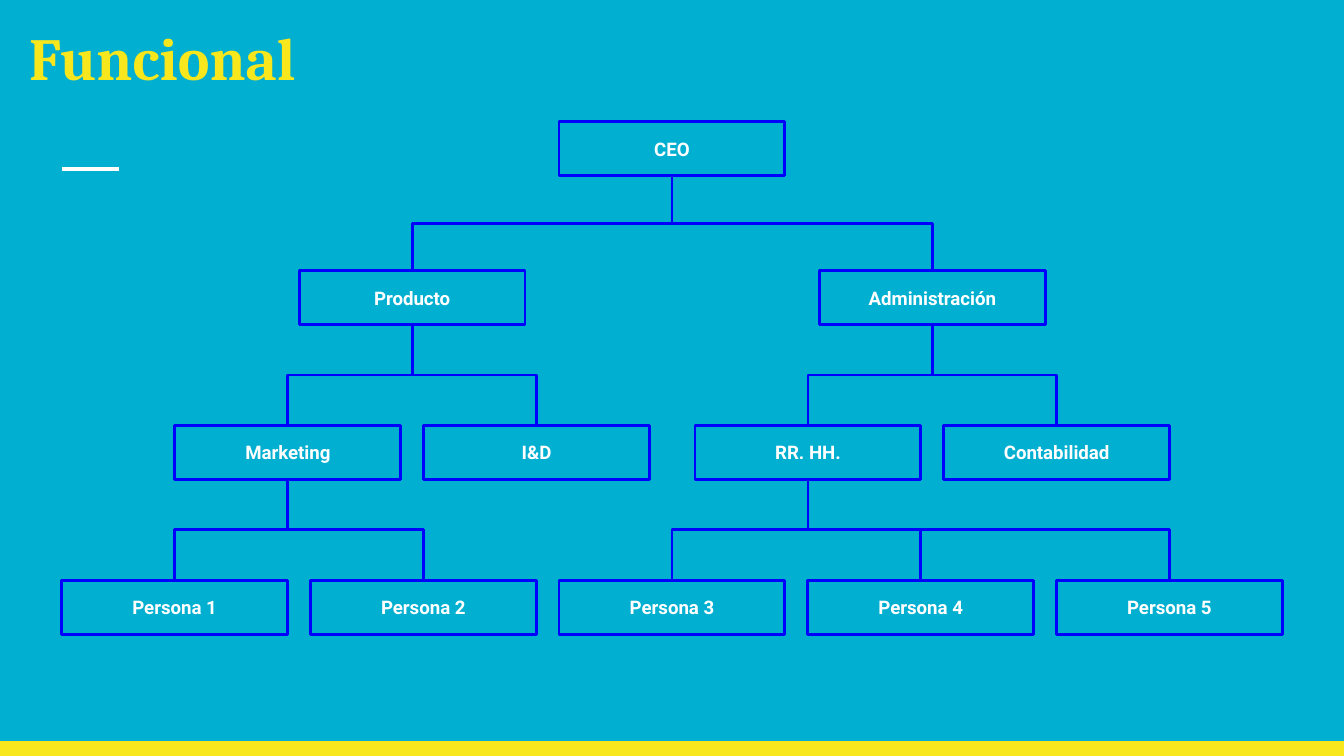
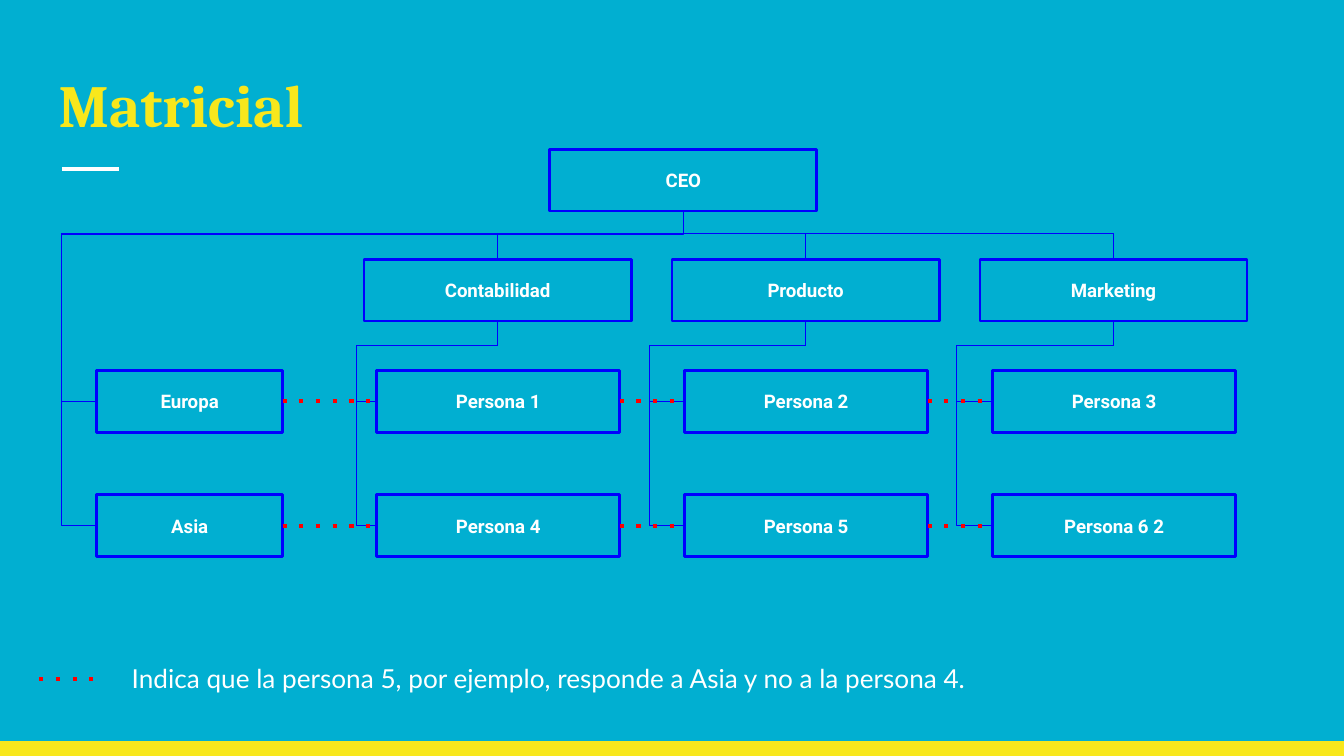
import pptx
import pptx.util
import pptx.dml.color
import pptx.enum.dml
import pptx.enum.shapes
import pptx.enum.text
import pptx.oxml.ns

Cm = pptx.util.Cm
Pt = pptx.util.Pt
Align = pptx.enum.text.PP_ALIGN
Anchor = pptx.enum.text.MSO_ANCHOR
Kind = pptx.enum.shapes.MSO_CONNECTOR
Rect = pptx.enum.shapes.MSO_SHAPE.RECTANGLE
qn = pptx.oxml.ns.qn

HUES = {
    "back": "01AFD1",
    "sun": "F8E71C",
    "blue": "0000FF",
    "red": "FF0000",
    "white": "FFFFFF",
}
TOP, LEFT, BOTTOM, RIGHT = range(4)


def hue(name):
    return pptx.dml.color.RGBColor.from_string(HUES[name])


def write(frame, text, font="Roboto", size=10, color="white", bold=False,
          align=Align.LEFT, anchor=Anchor.TOP):
    frame.word_wrap = True
    frame.auto_size = pptx.enum.text.MSO_AUTO_SIZE.NONE
    frame.vertical_anchor = anchor
    frame.margin_left = frame.margin_right = Cm(0.25)
    frame.margin_top = frame.margin_bottom = Cm(0.25)
    para = frame.paragraphs[0]
    para.alignment = align
    run = para.add_run()
    run.text = text
    run.font.name = font
    run.font.size = Pt(size)
    run.font.bold = bold
    run.font.color.rgb = hue(color)


class Deck:
    def __init__(self):
        self.prs = pptx.Presentation()
        self.prs.slide_width = Cm(25.4)
        self.prs.slide_height = Cm(14.29)
        self.slide = None
        fill = self.prs.slide_master.background.fill
        fill.solid()
        fill.fore_color.rgb = hue("back")

    def page(self, title, x, y, high):
        first = self.slide is None
        self.slide = self.prs.slides.add_slide(self.prs.slide_layouts[5])
        if first:
            self.brand()
        head = self.slide.shapes.title
        head.left, head.top = Cm(x), Cm(y)
        head.width, head.height = Cm(23.67), Cm(high)
        write(head.text_frame, title, font="Cambria", size=32, color="sun", bold=True)

    def brand(self):
        band = self.rect(0, 14.01, 25.4, 0.28)
        band.fill.solid()
        band.fill.fore_color.rgb = hue("sun")
        band.line.fill.background()
        rule = self.rule(1.17, 2.24, 3.2, "white")
        for item in (band, rule):
            self.prs.slide_master.shapes.element.append(item.element)

    def rect(self, x, y, wide, high):
        shape = self.slide.shapes.add_shape(Rect, Cm(x), Cm(y), Cm(wide), Cm(high))
        shape.shadow.inherit = False
        return shape

    def box(self, text, x, y, wide, high):
        shape = self.rect(x, y, wide, high)
        shape.fill.background()
        shape.line.color.rgb = hue("blue")
        shape.line.width = Pt(1.5)
        write(shape.text_frame, text, bold=True, align=Align.CENTER, anchor=Anchor.MIDDLE)
        return shape

    def note(self, text, x, y, wide, high):
        shape = self.slide.shapes.add_textbox(Cm(x), Cm(y), Cm(wide), Cm(high))
        write(shape.text_frame, text, font="Lato", size=14)

    def line(self, kind, color, width, ends=(0, 0, 0, 0)):
        link = self.slide.shapes.add_connector(kind, *map(Cm, ends))
        link.line.color.rgb = hue(color)
        link.line.width = Pt(width)
        props = link.element.spPr
        props.append(props.makeelement(qn("a:effectLst"), {}))
        return link

    def rule(self, x1, x2, y, color):
        return self.line(Kind.STRAIGHT, color, 2.25, (x1, y, x2, y))

    def dot(self, link):
        link.line.dash_style = pptx.enum.dml.MSO_LINE.ROUND_DOT
        link.element.spPr.find(".//" + qn("a:prstDash")).set("val", "dot")

    def tie(self, start, end):
        link = self.line(Kind.STRAIGHT, "red", 2.25)
        link.begin_connect(start, RIGHT)
        link.end_connect(end, LEFT)
        self.dot(link)

    def elbow(self, boss, unit, width, bus=None, side=None):
        link = self.line(Kind.ELBOW, "blue", width)
        link.begin_connect(boss, BOTTOM)
        link.end_connect(unit, TOP if side is None else LEFT)
        x1, y1 = boss.left + boss.width // 2, boss.top + boss.height
        x2, y2 = unit.left + unit.width // 2, unit.top
        if side is not None:
            x2, y2 = unit.left, unit.top + unit.height // 2
        wide, high = abs(x2 - x1), y2 - y1
        xfrm = link.element.spPr.xfrm
        xfrm.attrib.clear()
        if x2 > x1:
            xfrm.set("rot", "16200000")
            xfrm.set("flipH", "1")
        else:
            xfrm.set("rot", "5400000")
        link.left, link.top = (x1 + x2 - high) // 2, (y1 + y2 - wide) // 2
        link.width, link.height = high, wide

        bends = [0.5 if bus is None else (Cm(bus) - y1) / high]
        geom = link.element.spPr.find(qn("a:prstGeom"))
        if side is not None:
            geom.set("prst", "bentConnector4")
            bends.append((x1 - Cm(side)) / wide)
        guides = geom.find(qn("a:avLst"))
        for num, bend in enumerate(bends, 1):
            guide = guides.makeelement(qn("a:gd"), {
                "name": f"adj{num}", "fmla": f"val {round(bend * 100000)}"})
            guides.append(guide)


def by_role(deck):
    deck.page("Funcional", 0.3, 0.15, 1.6)
    wide, high = 4.27, 1.02
    tops = [2.3, 5.12, 8.04, 10.97]
    staff = [3.3 + 4.7 * num for num in range(5)]
    tree = [
        ("CEO", 0, 12.7, None),
        ("Producto", 1, 7.79, "CEO"),
        ("Administración", 1, 17.62, "CEO"),
        ("Marketing", 2, 5.44, "Producto"),
        ("I&D", 2, 10.14, "Producto"),
        ("RR. HH.", 2, 15.27, "Administración"),
        ("Contabilidad", 2, 19.97, "Administración"),
    ]
    for num, mid in enumerate(staff):
        boss = "Marketing" if num < 2 else "RR. HH."
        tree.append((f"Persona {num + 1}", 3, mid, boss))
    units = {}
    for name, level, mid, boss in tree:
        units[name] = deck.box(name, mid - wide / 2, tops[level], wide, high)
        if boss:
            deck.elbow(units[boss], units[name], 1.5)


def by_grid(deck):
    deck.page("Matricial", 0.86, 1.04, 1.8)
    high, step = 1.17, 5.82
    rows = [7, 9.35]
    sides = [6.74, 12.27, 18.08]
    areas = ["Contabilidad", "Producto", "Marketing"]
    zones = {
        "Europa": ["Persona 1", "Persona 2", "Persona 3"],
        "Asia": ["Persona 4", "Persona 5", "Persona 6 2"],
    }
    chief = deck.box("CEO", 10.39, 2.82, 5.05, high)
    heads = []
    for col, area in enumerate(areas):
        head = deck.box(area, 6.88 + step * col, 4.9, 5.05, high)
        deck.elbow(chief, head, 0.75, bus=4.42)
        heads.append(head)
    for top, (zone, staff) in zip(rows, zones.items()):
        prior = deck.box(zone, 1.83, top, 3.51, high)
        deck.elbow(chief, prior, 0.75, bus=4.42, side=1.17)
        for col, name in enumerate(staff):
            unit = deck.box(name, 7.12 + step * col, top, 4.59, high)
            deck.elbow(heads[col], unit, 0.75, bus=6.53, side=sides[col])
            deck.tie(prior, unit)
            prior = unit
    deck.dot(deck.rule(0.74, 1.96, 12.83, "red"))
    deck.note("Indica que la persona 5, por ejemplo, responde a Asia y no a la persona 4.",
              2.24, 12.27, 17.63, high)


def main():
    deck = Deck()
    by_role(deck)
    by_grid(deck)
    deck.prs.save("out.pptx")


if __name__ == "__main__":
    main()
